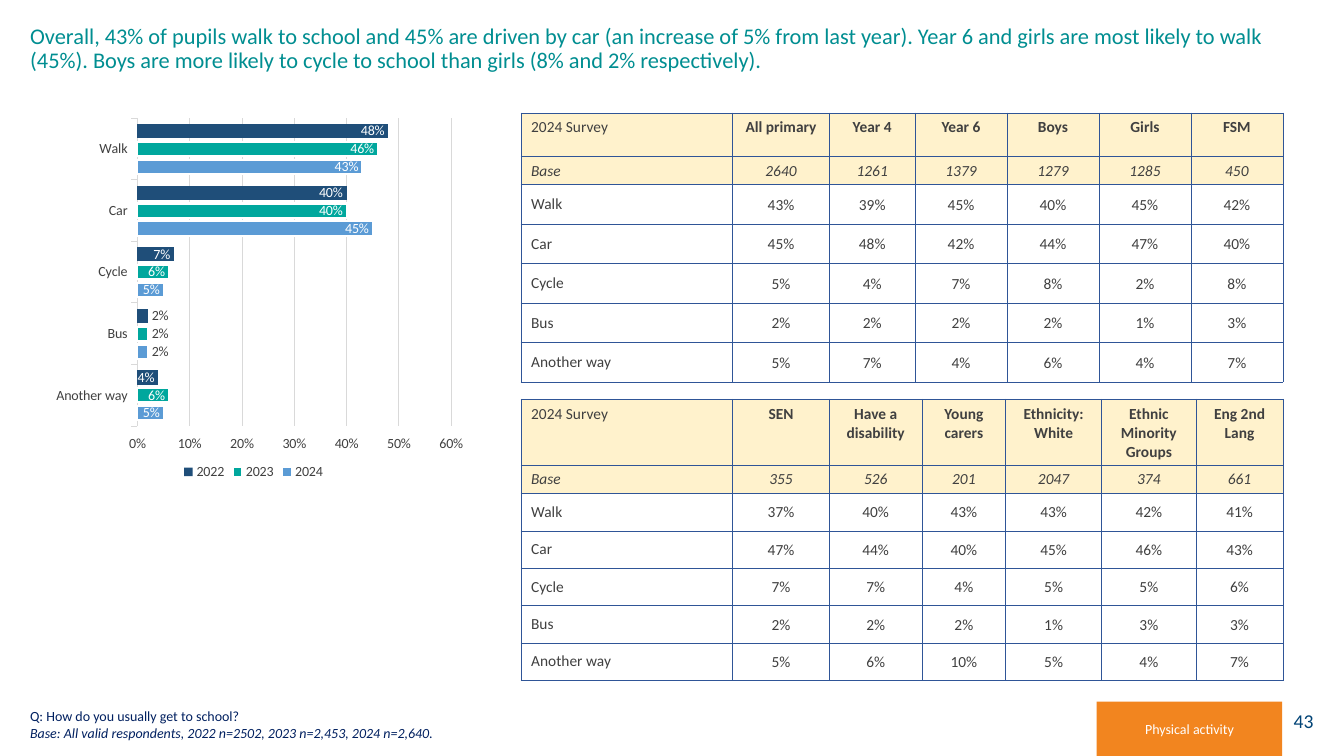
from lxml import etree
from pptx import Presentation
from pptx.chart.data import CategoryChartData
from pptx.dml.color import RGBColor
from pptx.enum.chart import XL_CHART_TYPE, XL_LABEL_POSITION, XL_LEGEND_POSITION, XL_TICK_MARK
from pptx.enum.shapes import MSO_SHAPE
from pptx.enum.text import MSO_ANCHOR, MSO_AUTO_SIZE, PP_ALIGN
from pptx.oxml import parse_xml
from pptx.oxml.ns import nsdecls, qn
from pptx.util import Pt

CLUSTERED = XL_CHART_TYPE.BAR_CLUSTERED
INSIDE, OUTSIDE = XL_LABEL_POSITION.INSIDE_END, XL_LABEL_POSITION.OUTSIDE_END
LEGEND_BOTTOM = XL_LEGEND_POSITION.BOTTOM
TICK_OUT, TICK_NONE = XL_TICK_MARK.OUTSIDE, XL_TICK_MARK.NONE
RECTANGLE = MSO_SHAPE.RECTANGLE
TOP, MIDDLE, BOTTOM = MSO_ANCHOR.TOP, MSO_ANCHOR.MIDDLE, MSO_ANCHOR.BOTTOM
LEFT, CENTER, RIGHT = PP_ALIGN.LEFT, PP_ALIGN.CENTER, PP_ALIGN.RIGHT
NO_FIT, GROW = MSO_AUTO_SIZE.NONE, MSO_AUTO_SIZE.SHAPE_TO_FIT_TEXT

FONT = "Calibri"
WHITE, GREY, GRID = "FFFFFF", "404040", "D9D9D9"
NAVY, TEAL, ORANGE = "002060", "008E91", "F2851F"
CREAM, BORDER = "FFF2CC", "2F5597"

HEADLINE = (
    "Overall, 43% of pupils walk to school and 45% are driven by car "
    "(an increase of 5% from last year). Year 6 and girls are most likely to walk (45%). "
    "Boys are more likely to cycle to school than girls (8% and 2% respectively)."
)
QUESTION = "Q: How do you usually get to school?"
BASE_NOTE = "Base: All valid respondents, 2022 n=2502, 2023 n=2,453, 2024 n=2,640."

MODES = ["Walk", "Car", "Cycle", "Bus", "Another way"]
# year: colour, white outline, shares in the order of MODES
YEARS = {
    "2024": ("5B9BD5", True, [43, 45, 5, 2, 5]),
    "2023": ("00A79D", True, [46, 40, 6, 2, 6]),
    "2022": ("1F4E79", False, [48, 40, 7, 2, 4]),
}

TABLE_LEFT = 372.2
PUPIL_TABLE = {
    "top": 80.6,
    "widths": [151.2, 69.1, 61.2, 65.7, 65.7, 65.7, 65.7],
    "heights": [31, 18.7] + [28.2] * 5,
    "groups": ["All primary", "Year 4", "Year 6", "Boys", "Girls", "FSM"],
    "bases": [2640, 1261, 1379, 1279, 1285, 450],
    "shares": [
        [43, 39, 45, 40, 45, 42],
        [45, 48, 42, 44, 47, 40],
        [5, 4, 7, 8, 2, 8],
        [2, 2, 2, 2, 1, 3],
        [5, 7, 4, 6, 4, 7],
    ],
}
BACKGROUND_TABLE = {
    "top": 285.2,
    "widths": [151.2, 69.1, 66.2, 59.8, 68.4, 67.7, 61.9],
    "heights": [46.1, 19.4] + [26.7] * 5,
    "groups": ["SEN", "Have a disability", "Young carers", "Ethnicity: White",
               "Ethnic Minority Groups", "Eng 2nd Lang"],
    "bases": [355, 526, 201, 2047, 374, 661],
    "shares": [
        [37, 40, 43, 43, 42, 41],
        [47, 44, 40, 45, 46, 43],
        [7, 7, 4, 5, 5, 6],
        [2, 2, 2, 1, 3, 3],
        [5, 6, 10, 5, 4, 7],
    ],
}


def rgb(value):
    return RGBColor.from_string(value)


def set_all(target, values):
    for name, value in values.items():
        setattr(target, name, value)


def place(shape, left, top, width, height):
    set_all(shape, {"left": Pt(left), "top": Pt(top), "width": Pt(width), "height": Pt(height)})


def style_font(font, size, color, bold=False, italic=False):
    set_all(font, {"name": FONT, "size": Pt(size), "bold": bold, "italic": italic})
    font.color.rgb = rgb(color)


def write(paragraph, text, size, color, align=LEFT, **emphasis):
    paragraph.alignment = align
    run = paragraph.add_run()
    run.text = text
    style_font(run.font, size, color, **emphasis)


def add_box(slide, box, fill, text, size, color, align):
    shape = slide.shapes.add_shape(RECTANGLE, *map(Pt, box))
    shape.shadow.inherit = False
    shape.fill.solid()
    shape.fill.fore_color.rgb = rgb(fill)
    shape.line.fill.background()
    set_all(shape.text_frame, {"word_wrap": True, "vertical_anchor": MIDDLE})
    write(shape.text_frame.paragraphs[0], text, size, color, align)


def add_title(slide):
    title = slide.shapes.title
    place(title, 14.4, 14.4, 920.2, 70.6)
    set_all(title.text_frame, {"word_wrap": True, "vertical_anchor": TOP, "auto_size": NO_FIT})
    paragraph = title.text_frame.paragraphs[0]
    paragraph.line_spacing = 0.9
    write(paragraph, HEADLINE, 16, TEAL)


def add_footnote(slide):
    frame = slide.shapes.add_textbox(Pt(14.4), Pt(501.1), Pt(416.2), Pt(31.7)).text_frame
    set_all(frame, {"word_wrap": True, "vertical_anchor": BOTTOM, "auto_size": GROW})
    write(frame.paragraphs[0], QUESTION, 10, NAVY)
    write(frame.add_paragraph(), BASE_NOTE, 10, NAVY, italic=True)


def add_borders(cell):
    properties = cell._tc.get_or_add_tcPr()
    for side in ("lnL", "lnR", "lnT", "lnB"):
        properties.append(parse_xml(
            f'<a:{side} {nsdecls("a")} w="{Pt(0.5)}"><a:solidFill>'
            f'<a:srgbClr val="{BORDER}"/></a:solidFill></a:{side}>'))


def format_cell(cell, text, row, column):
    add_borders(cell)
    if row < 2:
        cell.fill.solid()
        cell.fill.fore_color.rgb = rgb(CREAM)
    else:
        cell.fill.background()
    cell.vertical_anchor = MIDDLE if row else TOP
    if row > 1 and column:
        set_all(cell, {"margin_left": Pt(0.72), "margin_right": Pt(0.72),
                       "margin_top": Pt(0.72), "margin_bottom": Pt(0)})
    write(cell.text_frame.paragraphs[0], text, 11, GREY, CENTER if column else LEFT,
          bold=row == 0 and column > 0, italic=row == 1)


def add_survey_table(slide, top, widths, heights, groups, bases, shares):
    rows = [["2024 Survey", *groups], ["Base", *map(str, bases)]]
    rows += [[mode, *(f"{share}%" for share in line)] for mode, line in zip(MODES, shares)]
    table = slide.shapes.add_table(len(rows), len(widths), Pt(TABLE_LEFT), Pt(top),
                                   Pt(sum(widths)), Pt(sum(heights))).table
    set_all(table, {"first_row": False, "horz_banding": False})
    for column, width in zip(table.columns, widths):
        column.width = Pt(width)
    for row, height in zip(table.rows, heights):
        row.height = Pt(height)
    for r, texts in enumerate(rows):
        for c, text in enumerate(texts):
            format_cell(table.cell(r, c), text, r, c)


def set_plot_layout(chart, **fractions):
    plot_area = chart._chartSpace.chart.plotArea
    for old in plot_area.findall(qn("c:layout")):
        plot_area.remove(old)
    layout = etree.Element(qn("c:layout"))
    manual = etree.SubElement(layout, qn("c:manualLayout"))
    settings = {"layoutTarget": "inner", "xMode": "edge", "yMode": "edge", **fractions}
    for name, value in settings.items():
        etree.SubElement(manual, qn(f"c:{name}")).set("val", str(value))
    plot_area.insert(0, layout)


def format_axes(chart):
    for axis in (chart.category_axis, chart.value_axis):
        set_all(axis, {"major_tick_mark": TICK_OUT, "minor_tick_mark": TICK_NONE})
        style_font(axis.tick_labels.font, 10, GREY)
    values = chart.value_axis
    set_all(values, {"minimum_scale": 0, "maximum_scale": 0.6, "major_unit": 0.1})
    set_all(values.tick_labels, {"number_format": "0%", "number_format_is_linked": False})
    values.format.line.fill.background()
    for line in (chart.category_axis.format.line, values.major_gridlines.format.line):
        line.color.rgb = rgb(GRID)
        line.width = Pt(0.75)


def format_series(series, color, outlined, shares):
    """Colour the bars; labels sit inside in white, except on the shortest bars."""
    series.format.fill.solid()
    series.format.fill.fore_color.rgb = rgb(color)
    if outlined:
        series.format.line.color.rgb = rgb(WHITE)
        series.format.line.width = Pt(1.5)
    labels = series.data_labels
    set_all(labels, {"show_value": True, "number_format": "0%",
                     "number_format_is_linked": False, "position": INSIDE})
    style_font(labels.font, 10, WHITE)
    for index, share in enumerate(reversed(shares)):
        if share < 4:
            label = series.points[index].data_label
            style_font(label.font, 10, GREY)
            label.position = OUTSIDE


def add_travel_chart(slide):
    data = CategoryChartData(number_format="0%")
    data.categories = MODES[::-1]
    for year, (_, _, shares) in YEARS.items():
        data.add_series(year, [share / 100 for share in reversed(shares)])
    chart = slide.shapes.add_chart(CLUSTERED, Pt(25.2), Pt(65.5), Pt(311.8), Pt(280.1), data).chart
    style_font(chart.font, 10, "000000")
    set_all(chart, {"has_title": False, "has_legend": True})
    set_all(chart.legend, {"position": LEGEND_BOTTOM, "include_in_layout": False})
    style_font(chart.legend.font, 10, GREY)
    set_all(chart.plots[0], {"gap_width": 80, "overlap": -25, "vary_by_categories": False})
    set_plot_layout(chart, x=0.234, y=0.068, w=0.719, h=0.785)
    format_axes(chart)
    for series, look in zip(chart.plots[0].series, YEARS.values()):
        format_series(series, *look)


def main():
    presentation = Presentation()
    set_all(presentation, {"slide_width": Pt(960), "slide_height": Pt(540)})
    slide = presentation.slides.add_slide(presentation.slide_layouts[5])
    add_box(slide, (902.9, 500.4, 42.5, 28.8), WHITE, "43", 14, "004376", RIGHT)
    add_title(slide)
    add_footnote(slide)
    for survey in (PUPIL_TABLE, BACKGROUND_TABLE):
        add_survey_table(slide, **survey)
    add_box(slide, (783.4, 501.1, 132.5, 38.9), ORANGE, "Physical activity", 10, WHITE, CENTER)
    add_travel_chart(slide)
    presentation.save("out.pptx")


if __name__ == "__main__":
    main()
